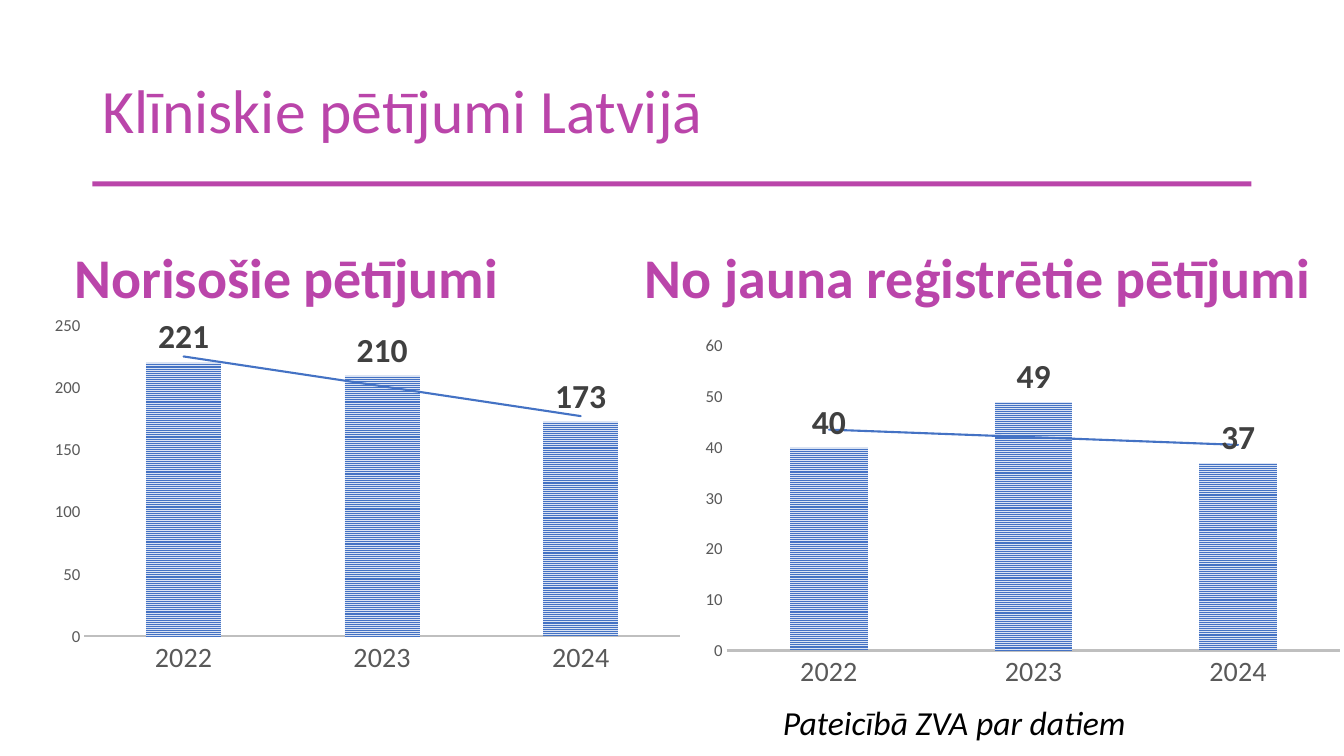
"""Build a slide with two column charts on clinical trials in Latvia."""
from dataclasses import dataclass

from pptx import Presentation
from pptx.chart.data import CategoryChartData
from pptx.dml.color import RGBColor
from pptx.enum.chart import XL_CHART_TYPE, XL_LABEL_POSITION, XL_TICK_MARK
from pptx.enum.dml import MSO_PATTERN
from pptx.enum.shapes import MSO_SHAPE
from pptx.enum.text import MSO_ANCHOR, MSO_AUTO_SIZE
from pptx.oxml import parse_xml
from pptx.oxml.ns import nsdecls, qn
from pptx.util import Pt


@dataclass(frozen=True)
class Theme:
    font: str = "Calibri"
    accent: str = "BA45AA"
    black: str = "000000"
    column: str = "4472C4"
    column_back: str = "DAE3F3"
    axis_text: str = "595959"
    axis_line: str = "BFBFBF"
    value_text: str = "404040"
    title_size: int = 44
    heading_size: int = 40
    note_size: int = 24
    value_size: int = 24
    category_size: int = 20
    scale_size: int = 12
    chart_size: int = 10


theme = Theme()


def style_font(font, size, color, bold=False, italic=False):
    font.name = theme.font
    font.size = Pt(size)
    font.color.rgb = RGBColor.from_string(color)
    font.bold = bold
    font.italic = italic


def add_text(text, left, top, width, height, size, color, bold=False, italic=False):
    shape = slide.shapes.add_textbox(Pt(left), Pt(top), Pt(width), Pt(height))
    shape.text_frame.text = text
    shape.text_frame.word_wrap = False
    shape.text_frame.auto_size = MSO_AUTO_SIZE.SHAPE_TO_FIT_TEXT
    style_font(shape.text_frame.paragraphs[0].runs[0].font, size, color, bold, italic)
    return shape


presentation = Presentation()
presentation.slide_width = Pt(960)
presentation.slide_height = Pt(540)
slide = presentation.slides.add_slide(presentation.slide_layouts[6])

title_rule = slide.shapes.add_shape(MSO_SHAPE.RECTANGLE, Pt(66), Pt(129.6), Pt(828), Pt(3.6))
title_rule.shadow.inherit = False
title_rule.fill.solid()
title_rule.fill.fore_color.rgb = RGBColor.from_string(theme.accent)
title_rule.line.fill.background()

title = add_text("Klīniskie pētījumi Latvijā", 66, 28.8, 828, 104.4, theme.title_size, theme.accent)
title.text_frame.auto_size = MSO_AUTO_SIZE.NONE
title.text_frame.word_wrap = True
title.text_frame.vertical_anchor = MSO_ANCHOR.MIDDLE
title.text_frame.paragraphs[0].line_spacing = 0.9

years = ["2022", "2023", "2024"]
ongoing_plot = {"x": 0.097, "y": 0.028, "w": 0.901, "h": 0.844}
trial_charts = [
    ([221, 210, 173], 14.4, 225.4, 250, 50, ongoing_plot),
    ([40, 49, 37], 494.6, 234.7, 60, 10, None),
]
for values, left, top, maximum, step, plot_area in trial_charts:
    chart_data = CategoryChartData()
    chart_data.categories = years
    chart_data.add_series("Series 1", values)
    chart = slide.shapes.add_chart(
        XL_CHART_TYPE.COLUMN_CLUSTERED, Pt(left), Pt(top), Pt(472.3), Pt(262.8), chart_data
    ).chart
    chart.has_legend = False
    chart.has_title = False
    style_font(chart.font, theme.chart_size, theme.black)

    category_axis = chart.category_axis
    category_axis.format.line.color.rgb = RGBColor.from_string(theme.axis_line)
    category_axis.format.line.width = Pt(1.5)
    style_font(category_axis.tick_labels.font, theme.category_size, theme.axis_text)
    value_axis = chart.value_axis
    value_axis.minimum_scale = 0
    value_axis.maximum_scale = maximum
    value_axis.major_unit = step
    value_axis.format.line.fill.background()
    style_font(value_axis.tick_labels.font, theme.scale_size, theme.axis_text)
    for axis in (category_axis, value_axis):
        axis.has_major_gridlines = False
        axis.major_tick_mark = XL_TICK_MARK.NONE
        axis.minor_tick_mark = XL_TICK_MARK.NONE

    plot = chart.plots[0]
    plot.gap_width = 164
    plot.overlap = -22
    plot.vary_by_categories = False
    series = plot.series[0]
    fill = series.format.fill
    fill.patterned()
    fill.pattern = MSO_PATTERN.NARROW_HORIZONTAL
    fill.fore_color.rgb = RGBColor.from_string(theme.column)
    fill.back_color.rgb = RGBColor.from_string(theme.column_back)

    labels = series.data_labels
    labels.show_value = True
    labels.position = XL_LABEL_POSITION.OUTSIDE_END
    style_font(labels.font, theme.value_size, theme.value_text, bold=True)

    trend_line = parse_xml(
        f'<c:trendline {nsdecls("c", "a")}><c:spPr><a:ln w="{Pt(1.5)}" cap="rnd"><a:solidFill>'
        f'<a:srgbClr val="{theme.column}"/></a:solidFill></a:ln></c:spPr>'
        '<c:trendlineType val="linear"/><c:dispRSqr val="0"/><c:dispEq val="0"/></c:trendline>'
    )
    series._element.find(qn("c:cat")).addprevious(trend_line)

    if plot_area:
        modes = "".join(f'<c:{side}Mode val="edge"/>' for side in "xy")
        sizes = "".join(f'<c:{side} val="{share}"/>' for side, share in plot_area.items())
        layout = parse_xml(
            f'<c:layout {nsdecls("c")}><c:manualLayout><c:layoutTarget val="inner"/>'
            f"{modes}{sizes}</c:manualLayout></c:layout>"
        )
        plot_element = chart._chartSpace.chart.plotArea
        for automatic_layout in plot_element.findall(qn("c:layout")):
            plot_element.remove(automatic_layout)
        plot_element.insert(0, layout)

for heading, left, width in [
    ("Norisošie pētījumi", 46, 321),
    ("No jauna reģistrētie pētījumi", 453.6, 496),
]:
    add_text(heading, left, 170, width, 55.4, theme.heading_size, theme.accent, bold=True)
add_text("Pateicībā ZVA par datiem", 552.2, 497.5, 262, 36, theme.note_size, theme.black, italic=True)

presentation.save("out.pptx")
